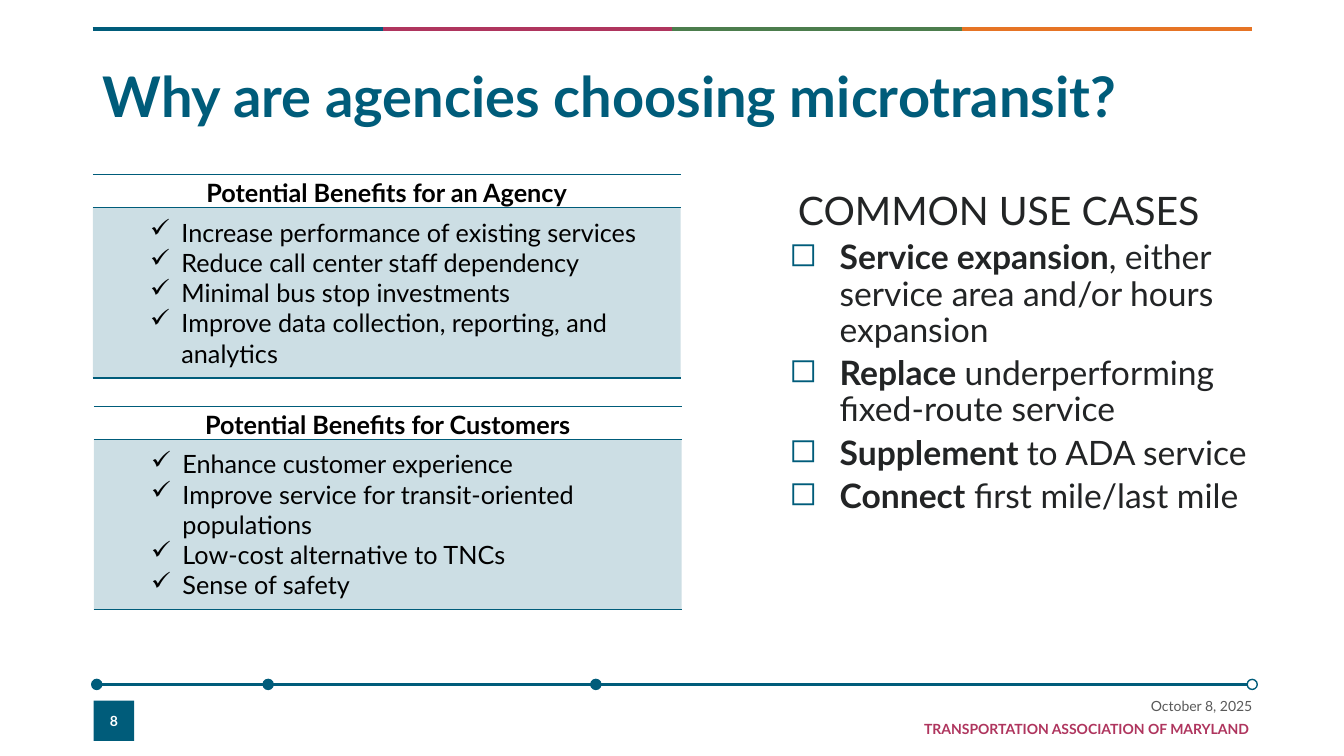
import pptx
import pptx.util
import pptx.dml.color
import pptx.enum.shapes
import pptx.enum.text
import pptx.oxml
import pptx.oxml.ns
from dataclasses import dataclass

TITLE = "Why are agencies choosing microtransit?"
BENEFITS = [
    ("Potential Benefits for an Agency", [
        "Increase performance of existing services",
        "Reduce call center staff dependency",
        "Minimal bus stop investments",
        "Improve data collection, reporting, and analytics"]),
    ("Potential Benefits for Customers", [
        "Enhance customer experience",
        "Improve service for transit-oriented populations",
        "Low-cost alternative to TNCs",
        "Sense of safety"]),
]
USE_CASES_HEADING = "COMMON USE CASES"
USE_CASES = [
    ("Service expansion", ", either service area and/or hours expansion"),
    ("Replace ", "underperforming fixed-route service"),
    ("Supplement ", "to ADA service"),
    ("Connect", " first mile/last mile"),
]
DATE = "October 8, 2025"
FOOTER = "TRANSPORTATION ASSOCIATION OF MARYLAND "
PAGE = "8"


@dataclass(frozen=True)
class Theme:
    font: str = "Lato"
    teal: str = "005C7A"
    ribbon: tuple = ("005C7A", "AF355E", "4C7D4D", "E67425")
    pink: str = "AF355E"
    ink: str = "222425"
    black: str = "000000"
    gray: str = "595959"
    white: str = "FFFFFF"
    title: int = 40
    heading: int = 28
    body: int = 24
    table: int = 18
    small: int = 10


T = Theme()
W, H = 13.33, 7.5
LEFT, CONTENT_W = 0.92, 11.5
RIGHT = LEFT + CONTENT_W
RIBBON_Y, TIMELINE_Y, DOT = 0.29, 6.79, 0.1
DOT_X = [0.96, 2.66, 5.91, RIGHT]
TABLE_W, TABLE_TOP, TABLE_STEP = 5.83, 1.73, 2.3
ROW_H = [0.33, 1.69]

Inches, Pt = pptx.util.Inches, pptx.util.Pt
ALIGN, ANCHOR = pptx.enum.text.PP_ALIGN, pptx.enum.text.MSO_ANCHOR
SHAPE = pptx.enum.shapes.MSO_SHAPE
NS = pptx.oxml.ns.nsdecls("a")
qn = pptx.oxml.ns.qn


def rgb(value):
    return pptx.dml.color.RGBColor.from_string(value)


def xml(text):
    return pptx.oxml.parse_xml(text)


def add_run(p, text, size, color, bold=False):
    r = p.add_run()
    r.text = text
    r.font.name, r.font.size, r.font.bold = T.font, Pt(size), bold
    r.font.color.rgb = rgb(color)


def next_paragraph(tf, first):
    return tf.paragraphs[0] if first else tf.add_paragraph()


def add_bullet(p, char, left, hanging, color):
    pPr = p._p.get_or_add_pPr()
    pPr.set("marL", str(Inches(left)))
    pPr.set("indent", str(-Inches(hanging)))
    pPr.append(xml(f'<a:buClr {NS}><a:srgbClr val="{color}"/></a:buClr>'))
    pPr.append(xml(f'<a:buChar {NS} char="{char}"/>'))


def add_line(s, x1, x2, y, color, width):
    c = s.shapes.add_connector(pptx.enum.shapes.MSO_CONNECTOR.STRAIGHT,
                               Inches(x1), Inches(y), Inches(x2), Inches(y))
    c.line.color.rgb, c.line.width = rgb(color), Pt(width)
    c._element.spPr.append(xml(f"<a:effectLst {NS}/>"))


def add_shape(s, kind, x, y, size, fill):
    sp = s.shapes.add_shape(kind, Inches(x), Inches(y), Inches(size), Inches(size))
    sp.shadow.inherit = False
    sp.fill.solid()
    sp.fill.fore_color.rgb = rgb(fill)
    sp.line.color.rgb, sp.line.width = rgb(T.teal), Pt(1)
    return sp


def set_margins(box, left, top, right, bottom):
    box.margin_left, box.margin_top = Inches(left), Inches(top)
    box.margin_right, box.margin_bottom = Inches(right), Inches(bottom)


def add_text_box(s, x, y, w, h, anchor, right=0.1):
    tf = s.shapes.add_textbox(Inches(x), Inches(y), Inches(w), Inches(h)).text_frame
    tf.word_wrap, tf.vertical_anchor = True, anchor
    set_margins(tf, 0.1, 0.05, right, 0.05)
    return tf


def add_footer(s, text, y, w, h, color, bold):
    p = add_text_box(s, RIGHT - w, y, w, h, ANCHOR.MIDDLE, 0).paragraphs[0]
    p.alignment = ALIGN.RIGHT
    add_run(p, text, T.small, color, bold)


def style_cell(cell, anchor):
    cell.vertical_anchor = anchor
    set_margins(cell, 0.07, 0, 0.07, 0)
    tcPr = cell._tc.get_or_add_tcPr()
    solid = f'<a:solidFill><a:srgbClr val="{T.teal}"/></a:solidFill>'
    sides = [("L", "<a:noFill/>"), ("R", "<a:noFill/>"), ("T", solid), ("B", solid)]
    for i, (side, paint) in enumerate(sides):
        tcPr.insert(i, xml(f'<a:ln{side} {NS} w="{Pt(1)}">{paint}</a:ln{side}>'))


def add_benefits(s, heading, items, x, y):
    table = s.shapes.add_table(2, 1, Inches(x), Inches(y), Inches(TABLE_W),
                               Inches(sum(ROW_H))).table
    table.first_row = table.horz_banding = False
    for row, height in zip(table.rows, ROW_H):
        row.height = Inches(height)
    head, body = table.cell(0, 0), table.cell(1, 0)
    head.fill.background()
    body.fill.solid()
    body.fill.fore_color.rgb = rgb(T.teal)
    color = body._tc.tcPr.find(".//" + qn("a:srgbClr"))
    color.append(xml(f'<a:alpha {NS} val="20000"/>'))
    style_cell(head, ANCHOR.BOTTOM)
    style_cell(body, ANCHOR.MIDDLE)
    p = head.text_frame.paragraphs[0]
    p.alignment, p.line_spacing = ALIGN.CENTER, Pt(12)
    add_run(p, heading, T.table, T.black, True)
    for i, item in enumerate(items):
        p = next_paragraph(body.text_frame, i == 0)
        add_bullet(p, "✓", 0.81, 0.31, T.black)
        add_run(p, item, T.table, T.black)


def main():
    prs = pptx.Presentation()
    prs.slide_width, prs.slide_height = Inches(W), Inches(H)
    s = prs.slides.add_slide(prs.slide_layouts[6])

    part = CONTENT_W / len(T.ribbon)
    for i, color in enumerate(T.ribbon):
        add_line(s, LEFT + i * part, LEFT + (i + 1) * part, RIBBON_Y, color, 3)
    add_line(s, DOT_X[0], DOT_X[-1], TIMELINE_Y, T.teal, 2)
    for x in DOT_X:
        add_shape(s, SHAPE.OVAL, x - DOT / 2, TIMELINE_Y - DOT / 2, DOT,
                  T.white if x == RIGHT else T.teal)

    p = add_text_box(s, LEFT, 0.4, CONTENT_W, 1.18, ANCHOR.MIDDLE).paragraphs[0]
    p.line_spacing = 0.9
    add_run(p, TITLE, T.title, T.teal, True)

    for i, (heading, items) in enumerate(BENEFITS):
        add_benefits(s, heading, items, LEFT + i * 0.01, TABLE_TOP + i * TABLE_STEP)

    tf = add_text_box(s, 7.23, 1.85, 5.35, 4.57, ANCHOR.TOP)
    p = tf.paragraphs[0]
    p.alignment, p.line_spacing = ALIGN.CENTER, 0.9
    add_run(p, USE_CASES_HEADING, T.heading, T.ink)
    for lead, rest in USE_CASES:
        p = tf.add_paragraph()
        add_bullet(p, "◻", 1, 0.5, T.teal)
        p.line_spacing, p.space_before = 0.9, Pt(5)
        add_run(p, lead, T.body, T.ink, True)
        add_run(p, rest, T.body, T.ink)

    add_footer(s, DATE, 6.91, 3, 0.18, T.gray, False)
    add_footer(s, FOOTER, 7.12, 5.96, 0.22, T.pink, True)
    badge = add_shape(s, SHAPE.RECTANGLE, 0.93, 6.95, 0.4, T.teal)
    badge.line.fill.background()
    tf = badge.text_frame
    tf.vertical_anchor = ANCHOR.MIDDLE
    set_margins(tf, 0, 0, 0, 0)
    p = tf.paragraphs[0]
    p.alignment = ALIGN.CENTER
    add_run(p, PAGE, T.small, T.white, True)
    prs.save("out.pptx")


if __name__ == "__main__":
    main()
